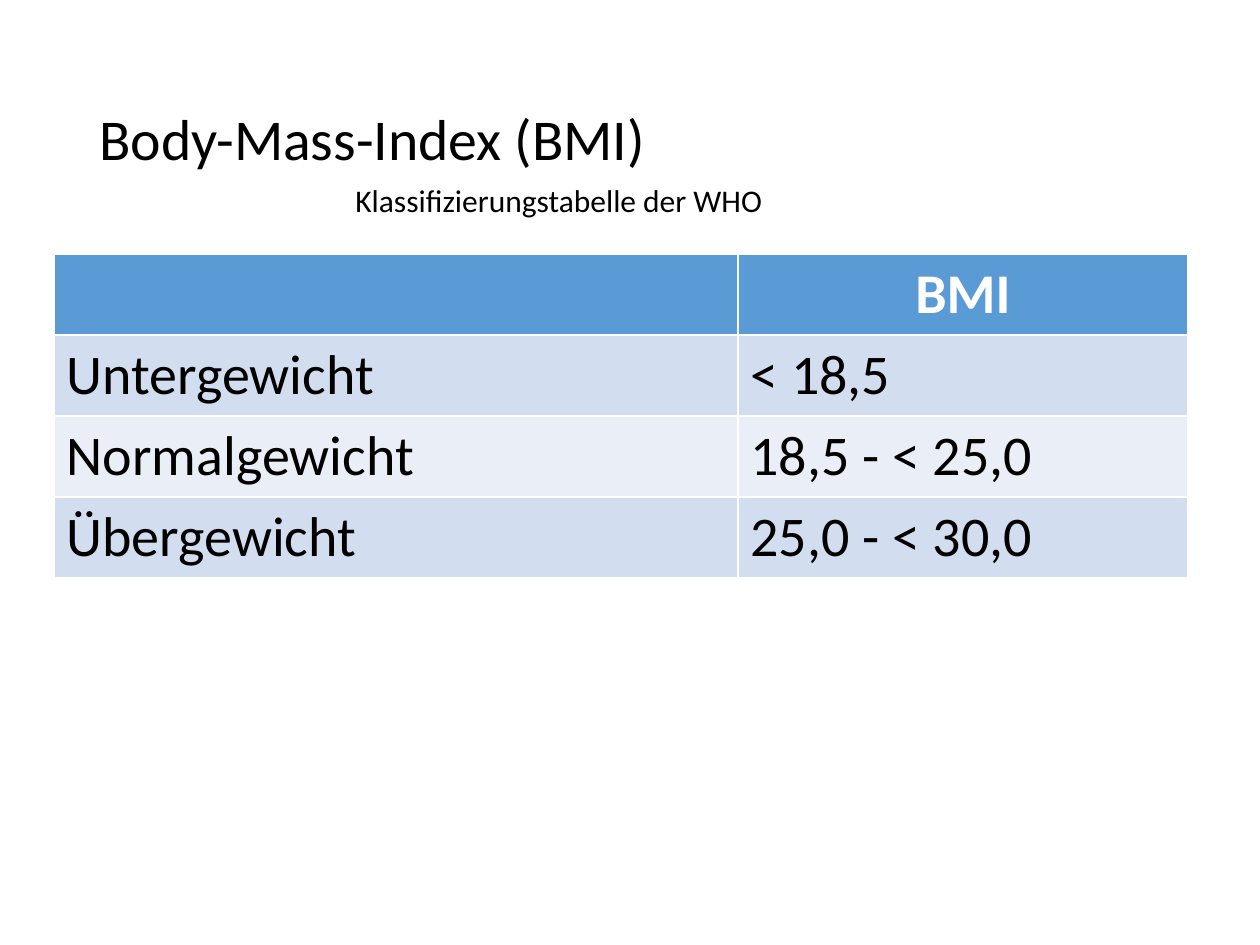
from pptx import Presentation
from pptx.dml.color import RGBColor
from pptx.enum.text import MSO_ANCHOR, PP_ALIGN
from pptx.util import Pt

SCALE = 914400 // 126
HUES = {"ink": "000000", "white": "FFFFFF", "head": "5B9BD5",
        "odd": "D2DEEF", "even": "EAEFF7"}
FORMS = {
    "title": {"size": Pt(33), "bold": False},
    "note": {"size": Pt(18), "bold": False},
    "head": {"size": Pt(32), "bold": True},
    "body": {"size": Pt(32), "bold": False},
}
ROWS = [
    ("", "BMI"),
    ("Untergewicht", "< 18,5"),
    ("Normalgewicht", "18,5 - < 25,0"),
    ("Übergewicht", "25,0 - < 30,0"),
]


def px(*nums):
    """Turn px lengths into EMU."""
    return [num * SCALE for num in nums]


def style(para, form, hue="ink"):
    """Set the font of a paragraph from a named format."""
    para.font.name = "Calibri"
    para.font.color.rgb = RGBColor.from_string(HUES[hue])
    for name, value in FORMS[form].items():
        setattr(para.font, name, value)


def label(slide, box, text, form, anchor=MSO_ANCHOR.TOP, lead=1.0):
    """Place one line of text in a box."""
    frame = slide.shapes.add_textbox(*px(*box)).text_frame
    frame.word_wrap = True
    frame.vertical_anchor = anchor
    para = frame.paragraphs[0]
    para.text = text
    para.line_spacing = lead
    style(para, form)


def heading(slide, box):
    """Place the title and the note below it."""
    left, top, width, height = box
    label(slide, box, "Body-Mass-Index (BMI)", "title", MSO_ANCHOR.MIDDLE, 0.9)
    label(slide, (left + 256, top + 125, 615, 50),
          "Klassifizierungstabelle der WHO", "note")


def grid(slide, box):
    """Place the table of weight classes."""
    table = slide.shapes.add_table(len(ROWS), 2, *px(*box)).table
    first = 684
    for col, width in zip(table.columns, px(first, box[2] - first)):
        col.width = width
    for r, row in enumerate(ROWS):
        band = "head" if r == 0 else "odd" if r % 2 else "even"
        for c, text in enumerate(row):
            cell = table.cell(r, c)
            cell.fill.solid()
            cell.fill.fore_color.rgb = RGBColor.from_string(HUES[band])
            para = cell.text_frame.paragraphs[0]
            para.text = text
            if r == 0:
                para.alignment = PP_ALIGN.CENTER
                style(para, "head", "white")
            else:
                style(para, "body")


def main():
    """Build the slide and save it."""
    deck = Presentation()
    deck.slide_width, deck.slide_height = px(1260, 945)
    slide = deck.slides.add_slide(deck.slide_layouts[6])
    heading(slide, (87, 50, 1086, 183))
    grid(slide, (54, 254, 1134, 324))
    deck.save("out.pptx")


if __name__ == "__main__":
    main()
